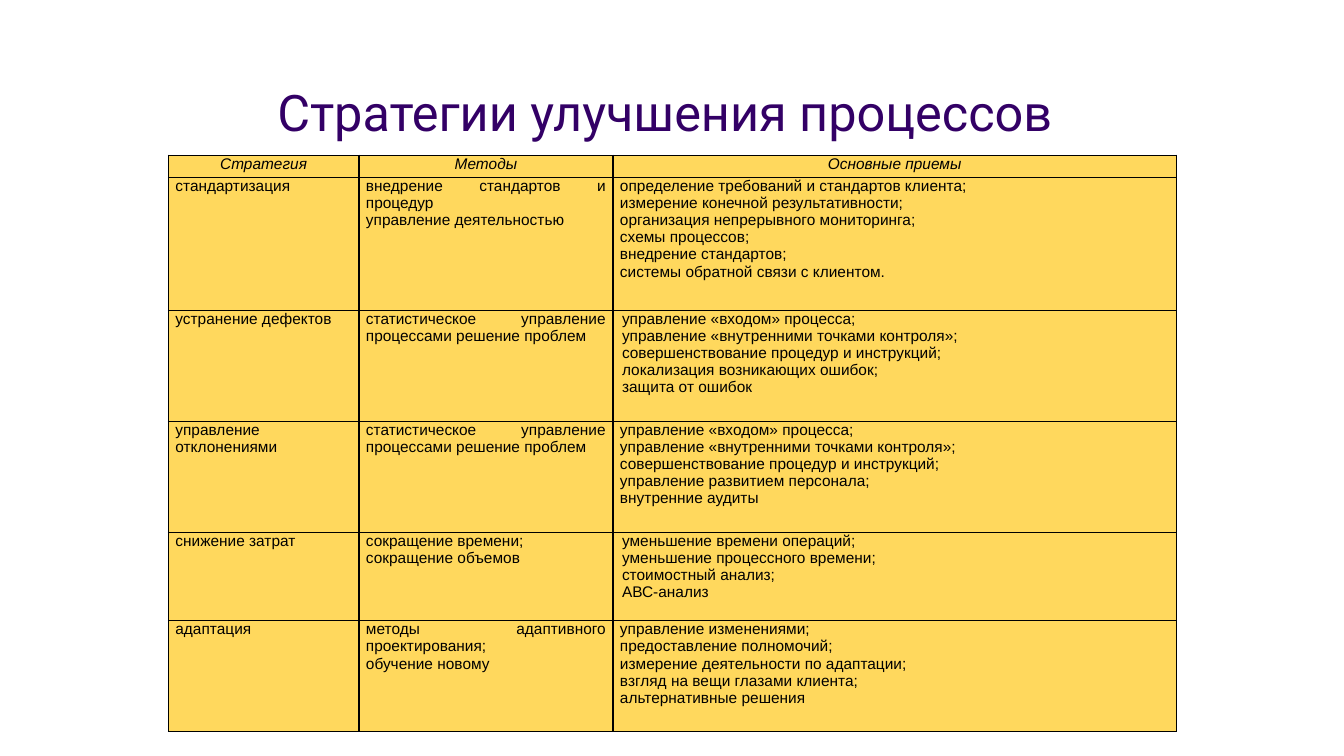
from lxml import etree
from pptx import Presentation
from pptx.dml.color import RGBColor
from pptx.enum import text
from pptx.oxml import ns, parse_xml
from pptx.util import Inches, Pt

COLUMN_WIDTHS = [1.89, 2.52, 5.59]
ROW_HEIGHTS = [0.22, 1.32, 1.1, 1.1, 0.88, 1.1]
INDENTED_ROWS = (2, 4)
STRATEGIES = [
    ["Стратегия", "Методы", "Основные приемы"],
    ["стандартизация",
     "внедрение стандартов и процедур\nуправление деятельностью",
     "определение требований и стандартов клиента;\n"
     "измерение конечной результативности;\n"
     "организация непрерывного мониторинга;\n"
     "схемы процессов;\n"
     "внедрение стандартов;\n"
     "системы обратной связи с клиентом."],
    ["устранение дефектов",
     "статистическое управление процессами решение проблем",
     "управление «входом» процесса;\n"
     "управление «внутренними точками контроля»;\n"
     "совершенствование процедур и инструкций;\n"
     "локализация возникающих ошибок;\n"
     "защита от ошибок"],
    ["управление отклонениями",
     "статистическое управление процессами решение проблем",
     "управление «входом» процесса;\n"
     "управление «внутренними точками контроля»;\n"
     "совершенствование процедур и инструкций;\n"
     "управление развитием персонала;\n"
     "внутренние аудиты"],
    ["снижение затрат",
     "сокращение времени;\nсокращение объемов",
     "уменьшение времени операций;\n"
     "уменьшение процессного времени;\n"
     "стоимостный анализ;\n"
     "АВС-анализ"],
    ["адаптация",
     "методы адаптивного проектирования;\nобучение новому",
     "управление изменениями;\n"
     "предоставление полномочий;\n"
     "измерение деятельности по адаптации;\n"
     "взгляд на вещи глазами клиента;\n"
     "альтернативные решения"],
]


def write(frame, words, *, font, size, color, align, italic=False, indent=0):
    """Fill a text frame, one paragraph per line of words."""
    frame.text = words
    for para in frame.paragraphs:
        para.alignment = align
        if indent:
            para._p.get_or_add_pPr().set("marL", str(Inches(indent)))
        for span in para.runs:
            span.font.name = font
            span.font.size = Pt(size)
            span.font.italic = italic
            span.font.color.rgb = RGBColor.from_string(color)


def add_borders(cell, color, width):
    properties = cell._tc.get_or_add_tcPr()
    for position, side in enumerate(("a:lnL", "a:lnR", "a:lnT", "a:lnB")):
        line = etree.Element(ns.qn(side), w=str(Pt(width)))
        fill = etree.SubElement(line, ns.qn("a:solidFill"))
        etree.SubElement(fill, ns.qn("a:srgbClr"), val=color)
        properties.insert(position, line)


deck = Presentation()
deck.slide_width = Inches(13.33)
deck.slide_height = Inches(7.5)
page = deck.slides.add_slide(deck.slide_layouts[5])

title = page.shapes.title
title.left, title.top = Inches(2.65), Inches(0.76)
title.width, title.height = Inches(8.67), Inches(0.7)
# Rounded corners also inset the text slightly.
title._element.spPr.append(parse_xml(
    f'<a:prstGeom {ns.nsdecls("a")} prst="roundRect"><a:avLst>'
    '<a:gd name="adj" fmla="val 21700"/></a:avLst></a:prstGeom>'))
title.text_frame.vertical_anchor = text.MSO_ANCHOR.BOTTOM
title.text_frame.auto_size = text.MSO_AUTO_SIZE.NONE
write(title.text_frame, "Стратегии улучшения процессов", font="Roboto",
      size=36, color="330066", align=text.PP_ALIGN.LEFT)

table = page.shapes.add_table(
    len(ROW_HEIGHTS), len(COLUMN_WIDTHS), Inches(1.67), Inches(1.54),
    Inches(sum(COLUMN_WIDTHS)), Inches(sum(ROW_HEIGHTS))).table
table.horz_banding = False
table.first_row = False
for column, width in zip(table.columns, COLUMN_WIDTHS):
    column.width = Inches(width)
for row, height in zip(table.rows, ROW_HEIGHTS):
    row.height = Inches(height)

for r, strategy in enumerate(STRATEGIES):
    for c, words in enumerate(strategy):
        cell = table.cell(r, c)
        cell.margin_left = cell.margin_right = Inches(0.07)
        cell.margin_top = cell.margin_bottom = 0
        cell.fill.solid()
        cell.fill.fore_color.rgb = RGBColor.from_string("FFD85D")
        add_borders(cell, "000000", 1)
        header = r == 0
        write(cell.text_frame, words, font="Arial", size=11, color="000000",
              align=text.PP_ALIGN.CENTER if header else text.PP_ALIGN.JUSTIFY,
              italic=header,
              indent=0.02 if c == 2 and r in INDENTED_ROWS else 0)

deck.save("out.pptx")
